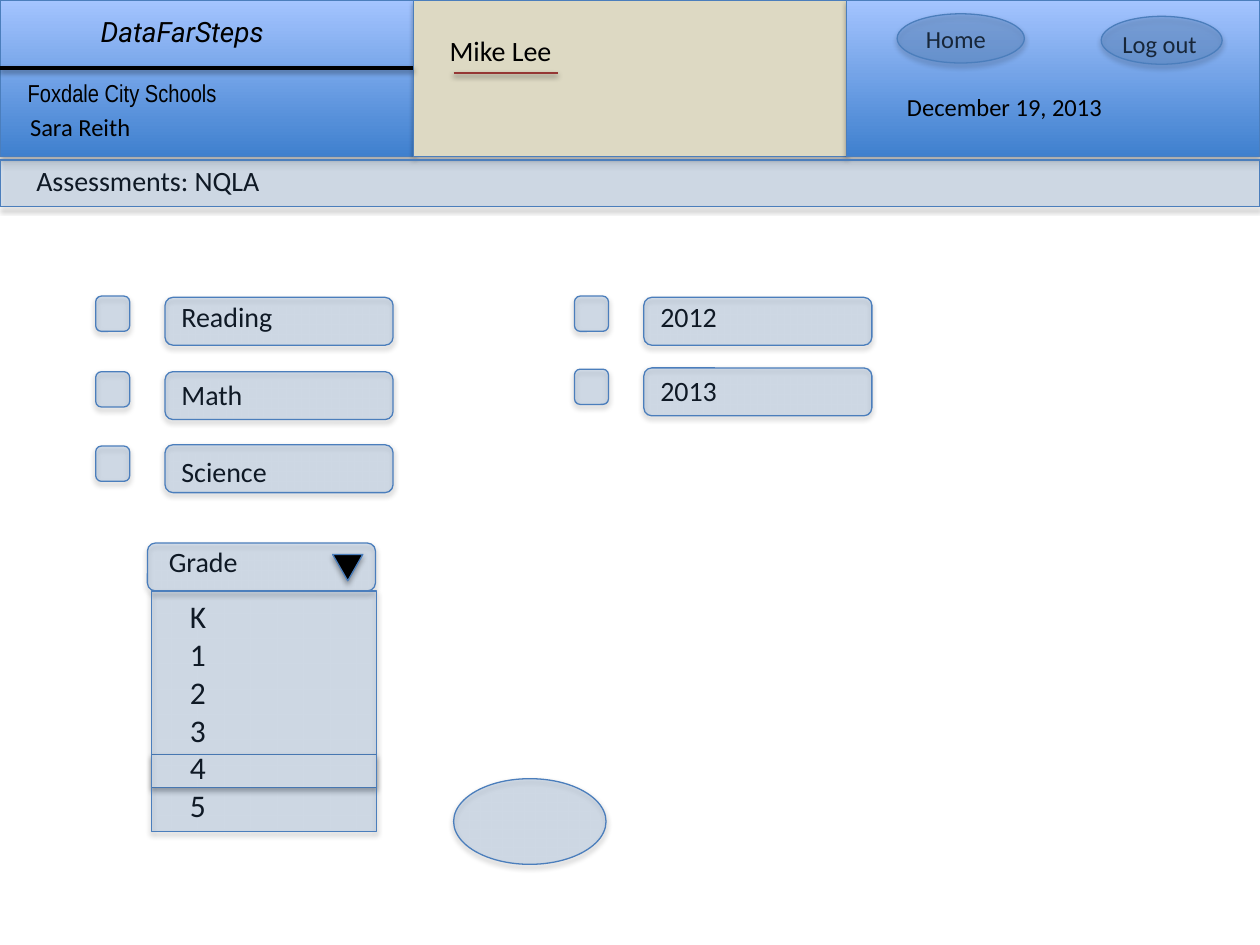
from lxml.etree import SubElement as Sub
from pptx import Presentation
from pptx.dml.color import RGBColor as Rgb
from pptx.enum.shapes import MSO_CONNECTOR as Conn, MSO_SHAPE as Form
from pptx.enum.text import MSO_ANCHOR as Anchor, MSO_AUTO_SIZE as Fit
from pptx.oxml.ns import qn
from pptx.util import Inches, Pt


def paint(code):
    return Rgb.from_string(code)


class Page:
    font = "Calibri"
    ink = "000000"
    edge = "4B7EBC"
    tint = "4F81BD"
    shade = (("3F80CE", "A4C4FF"))

    def __init__(self, deck):
        self.slide = deck.slides.add_slide(deck.slide_layouts[6])
        self.host = self.slide.shapes

    def group(self):
        self.host = self.slide.shapes.add_group_shape().shapes

    def ungroup(self):
        self.host = self.slide.shapes

    def shadow(self, list_, alpha, dist):
        glow = Sub(list_, qn("a:outerShdw"), blurRad=str(Pt(3.1)),
                   dist=str(Pt(dist)), dir="5400000", rotWithShape="0")
        tone = Sub(glow, qn("a:srgbClr"), val=self.ink)
        Sub(tone, qn("a:alpha"), val=str(alpha * 1000))

    def shape(self, form, x, y, w, h, fill=None, alpha=20):
        item = self.host.add_shape(form, Inches(x), Inches(y), Inches(w), Inches(h))
        item.fill.solid()
        item.fill.fore_color.rgb = paint(fill or self.tint)
        if fill is None:
            tone = item.fill._xPr.find(qn("a:solidFill"))[0]
            Sub(tone, qn("a:alpha"), val=str(alpha * 1000))
        item.line.color.rgb = paint(self.edge)
        item.line.width = Pt(0.75)
        item.shadow.inherit = False
        self.shadow(item._element.spPr.find(qn("a:effectLst")), 35, 1.8)
        return item

    def panel(self, x, w, h):
        item = self.shape(Form.RECTANGLE, x, 0, w, h, self.ink)
        item.fill.gradient()
        item.fill.gradient_angle = 90
        for stop, code in zip(item.fill.gradient_stops, self.shade):
            stop.color.rgb = paint(code)

    def rule(self, x, y, end, code, width):
        item = self.host.add_connector(
            Conn.STRAIGHT, Inches(x), Inches(y), Inches(end), Inches(y))
        item.line.color.rgb = paint(code)
        item.line.width = Pt(width)
        self.shadow(Sub(item._element.spPr, qn("a:effectLst")), 38, 1.6)

    def text(self, words, x, y, w, h, size=14, font=None, slant=None, wrap=True):
        box = self.host.add_textbox(Inches(x), Inches(y), Inches(w), Inches(h))
        frame = box.text_frame
        frame.text = words
        frame.word_wrap = wrap
        frame.auto_size = Fit.SHAPE_TO_FIT_TEXT
        for para in frame.paragraphs:
            for run in para.runs:
                run.font.name = font or self.font
                run.font.size = Pt(size)
                run.font.italic = slant
                run.font.color.rgb = paint(self.ink)
        return frame

    def label(self, words, x, y, w):
        frame = self.text(words, x, y, w, 0.33, 16)
        frame.auto_size = Fit.NONE
        frame.vertical_anchor = Anchor.MIDDLE
        frame.margin_left = frame.margin_right = Inches(0.05)
        frame.margin_top = frame.margin_bottom = Inches(0.05)
        para = frame.paragraphs[0]
        para.line_spacing = 0.9
        para.space_after = Pt(5.6)

    def field(self, x, y):
        self.shape(Form.ROUNDED_RECTANGLE, x, y, 1.81, 0.38)

    def choice(self, words, x, tick, bar, text):
        self.label(words, x + 0.63, text, 1.01)
        self.field(x + 0.55, bar)
        self.shape(Form.ROUNDED_RECTANGLE, x, tick, 0.27, 0.28)


def header(page):
    side, top = 3.28, 1.24
    page.panel(0, side, top)
    page.shape(Form.RECTANGLE, side, 0, 10 - 2 * side, top, "DDD9C3")
    page.panel(10 - side, side, top)
    page.text("Sara Reith", 0.14, 0.84, 1.37, 0.34)
    page.text("December 19, 2013", 7.1, 0.68, 1.87, 0.34)
    page.group()
    page.text("Log out", 8.81, 0.18, 0.9, 0.34)
    page.shape(Form.OVAL, 8.74, 0.13, 0.96, 0.38, alpha=30)
    page.ungroup()
    page.text("Home", 7.25, 0.14, 0.78, 0.34)
    page.shape(Form.OVAL, 7.12, 0.11, 1.01, 0.39, alpha=30)
    page.text("Foxdale City Schools", 0.12, 0.57, 1.89, 0.34, font="Arial Narrow")
    page.text("DataFarSteps", 0.7, 0.07, 1.89, 0.37, 16, "Roboto", True)
    page.rule(0, 0.54, side, page.ink, 2)
    page.text("Mike Lee", 3.47, 0.22, 1.33, 0.37, 16)
    page.rule(3.6, 0.58, 4.43, "953735", 1.5)


def choices(page):
    for row in (
        ("Reading", 0.76, 2.35, 2.36, 2.36),
        ("Math", 0.76, 2.95, 2.95, 2.98),
        ("Science", 0.76, 3.54, 3.53, 3.59),
        ("2012", 4.56, 2.35, 2.36, 2.36),
        ("2013", 4.56, 2.93, 2.92, 2.95),
    ):
        page.choice(*row)


def grades(page):
    page.shape(Form.RECTANGLE, 1.2, 5.99, 1.79, 0.26, "FFFFFF")
    page.group()
    page.label("Grade", 1.29, 4.31, 0.78)
    page.field(1.17, 4.31)
    arrow = page.shape(Form.ISOSCELES_TRIANGLE, 2.64, 4.4, 0.24, 0.21, page.ink)
    arrow.rotation = 180
    page.ungroup()
    page.text("\n".join("K12345"), 1.41, 4.69, 0.33, 1.92, 18, wrap=False)
    page.shape(Form.RECTANGLE, 1.2, 4.69, 1.79, 1.91)


def main():
    deck = Presentation()
    deck.slide_width, deck.slide_height = Inches(10), Inches(7.5)
    page = Page(deck)
    header(page)
    page.text("Assessments: NQLA", 0.19, 1.25, 2.76, 0.37, 16)
    choices(page)
    grades(page)
    page.shape(Form.OVAL, 3.6, 6.18, 1.21, 0.68)
    page.shape(Form.RECTANGLE, 0, 1.27, 10, 0.37)
    deck.save("out.pptx")


if __name__ == "__main__":
    main()
